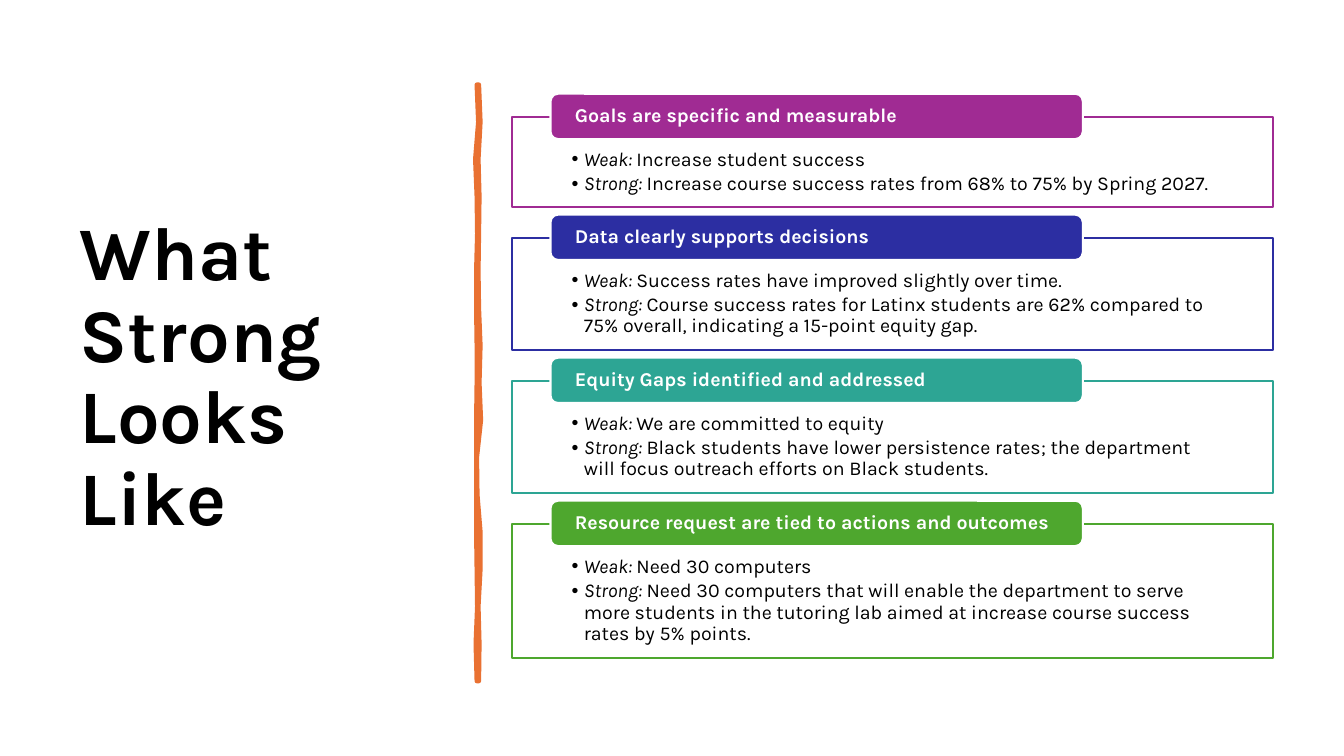
from dataclasses import dataclass

from lxml import etree
from pptx import Presentation
from pptx.dml.color import RGBColor
from pptx.enum.shapes import MSO_SHAPE
from pptx.enum.text import MSO_ANCHOR, MSO_AUTO_SIZE, PP_ALIGN
from pptx.oxml.ns import qn
from pptx.util import Inches, Pt

ROUND = MSO_SHAPE.ROUNDED_RECTANGLE
TOP, MIDDLE = MSO_ANCHOR.TOP, MSO_ANCHOR.MIDDLE
LEFT = PP_ALIGN.LEFT
FIXED = MSO_AUTO_SIZE.NONE

WIDTH, HEIGHT = Inches(13.33), Inches(7.5)


@dataclass(frozen=True)
class Theme:
    font: str = "Karla"
    head: float = 54
    text: float = 14
    edge: float = 1.5
    brush: float = 3.25
    spacing: float = 0.9
    after: float = 2.5
    ink: str = "000000"
    paper: str = "FFFFFF"
    orange: str = "E97132"
    purple: str = "A02B93"
    blue: str = "2C2EA2"
    teal: str = "2DA594"
    green: str = "4EA72E"


THEME = Theme()

# Heading, color, weak wording, strong wording, lines of text
CARDS = [
    ("Goals are specific and measurable", THEME.purple,
     "Increase student success",
     "Increase course success rates from 68% to 75% by Spring 2027.", 2),
    ("Data clearly supports decisions", THEME.blue,
     "Success rates have improved slightly over time.",
     "Course success rates for Latinx students are 62% compared to "
     "75% overall, indicating a 15-point equity gap.", 3),
    ("Equity Gaps identified and addressed", THEME.teal,
     "We are committed to equity",
     "Black students have lower persistence rates; the department "
     "will focus outreach efforts on Black students.", 3),
    ("Resource request are tied to actions and outcomes", THEME.green,
     "Need 30 computers",
     "Need 30 computers that will enable the department to serve "
     "more students in the tutoring lab aimed at increase course success "
     "rates by 5% points.", 4),
]

# Sideways sway of the brush stroke at equal steps down each edge
RIGHT_SWAY = [0, 1.5, -0.5, 0.5, 0, -0.5, 0, 1.5, 0.5,
              2, -2, -1.5, 1.5, 1.5, -0.5, 0.5, 0]
LEFT_SWAY = [0, 1.5, -1.5, 0, 0.5, -0.5, -0.5, 0, 0,
             -0.5, -0.5, -0.5, -0.5, 0, 0.5, -1, 0]


def col(share):
    """Percent of the slide's width."""
    return round(WIDTH * share / 100)


def row(share):
    """Percent of the slide's height."""
    return round(HEIGHT * share / 100)


def place(shape, left, top, width, height):
    shape.left, shape.top = col(left), row(top)
    shape.width, shape.height = col(width), row(height)


def paint(shape, fill, line, weight):
    shape.fill.solid()
    shape.fill.fore_color.rgb = RGBColor.from_string(fill)
    shape.line.color.rgb = RGBColor.from_string(line)
    shape.line.width = Pt(weight)


def frame(shape, anchor, left, top, right, bottom):
    box = shape.text_frame
    box.word_wrap = True
    box.auto_size = FIXED
    box.vertical_anchor = anchor
    box.margin_left, box.margin_right = col(left), col(right)
    box.margin_top, box.margin_bottom = row(top), row(bottom)
    return box


def style(para, size, color, bold):
    para.alignment = LEFT
    para.line_spacing = THEME.spacing
    para.space_before = Pt(0)
    font = para.font
    font.name, font.size, font.bold = THEME.font, Pt(size), bold
    font.color.rgb = RGBColor.from_string(color)


def bullet(para):
    props = para._p.get_or_add_pPr()
    props.set("marL", str(Inches(0.12)))
    props.set("indent", str(-Inches(0.12)))
    face = etree.SubElement(props, qn("a:buFont"))
    face.set("typeface", "Arial")
    etree.SubElement(props, qn("a:buChar")).set("char", "•")


def add_title(slide):
    title = slide.shapes.title
    place(title, 5.18, 9.33, 28.06, 81.47)
    box = frame(title, MIDDLE, 0.75, 0.67, 0.75, 0.67)
    box.text = "What Strong Looks Like"
    style(box.paragraphs[0], THEME.head, THEME.ink, True)


def add_brush(slide):
    top, step, unit = 11.2, 4.93, 0.075

    def edge(base, sway):
        return [(col(base + unit * dx), row(top + step * i))
                for i, dx in enumerate(sway)]

    points = edge(35.63, RIGHT_SWAY) + edge(35.48, LEFT_SWAY)[::-1]
    path = slide.shapes.build_freeform(*points[0])
    path.add_line_segments(points[1:], close=True)
    brush = path.convert_to_shape()
    brush.shadow.inherit = False
    paint(brush, THEME.orange, THEME.orange, THEME.brush)


def add_list(panel, top, height, color, items):
    place(panel, 38.11, top, 56.64, height)
    paint(panel, THEME.paper, color, THEME.edge)
    box = frame(panel, TOP, 4.43, 4.27, 4.43, 1.47)
    for i, (label, words) in enumerate(items):
        para = box.paragraphs[0] if i == 0 else box.add_paragraph()
        bullet(para)
        style(para, THEME.text, THEME.ink, False)
        para.space_after = Pt(THEME.after)
        for text, slant in ((label + " ", True), (words, False)):
            run = para.add_run()
            run.text = text
            run.font.italic = slant


def add_tab(slide, top, color, text):
    tab = slide.shapes.add_shape(ROUND, 0, 0, 0, 0)
    place(tab, 40.96, top, 39.61, 6)
    tab.shadow.inherit = False
    paint(tab, color, THEME.paper, THEME.edge)
    box = frame(tab, MIDDLE, 1.65, 0, 1.65, 0)
    box.text = text
    style(box.paragraphs[0], THEME.text, THEME.paper, True)


def main():
    deck = Presentation()
    deck.slide_width, deck.slide_height = WIDTH, HEIGHT
    # The comparison layout holds a title and four body placeholders
    slide = deck.slides.add_slide(deck.slide_layouts[4])
    panels = [slide.placeholders[i] for i in range(1, 5)]

    add_title(slide)
    add_brush(slide)

    # Cards grow with their lines of text and keep an equal gap
    top, gap, lift = 15.47, 4.13, 3.07
    for panel, (head, color, weak, strong, lines) in zip(panels, CARDS):
        height = 6 + 2.93 * lines
        items = [("Weak:", weak), ("Strong:", strong)]
        add_list(panel, top, height, color, items)
        add_tab(slide, top - lift, color, head)
        top += height + gap

    deck.save("out.pptx")


if __name__ == "__main__":
    main()
